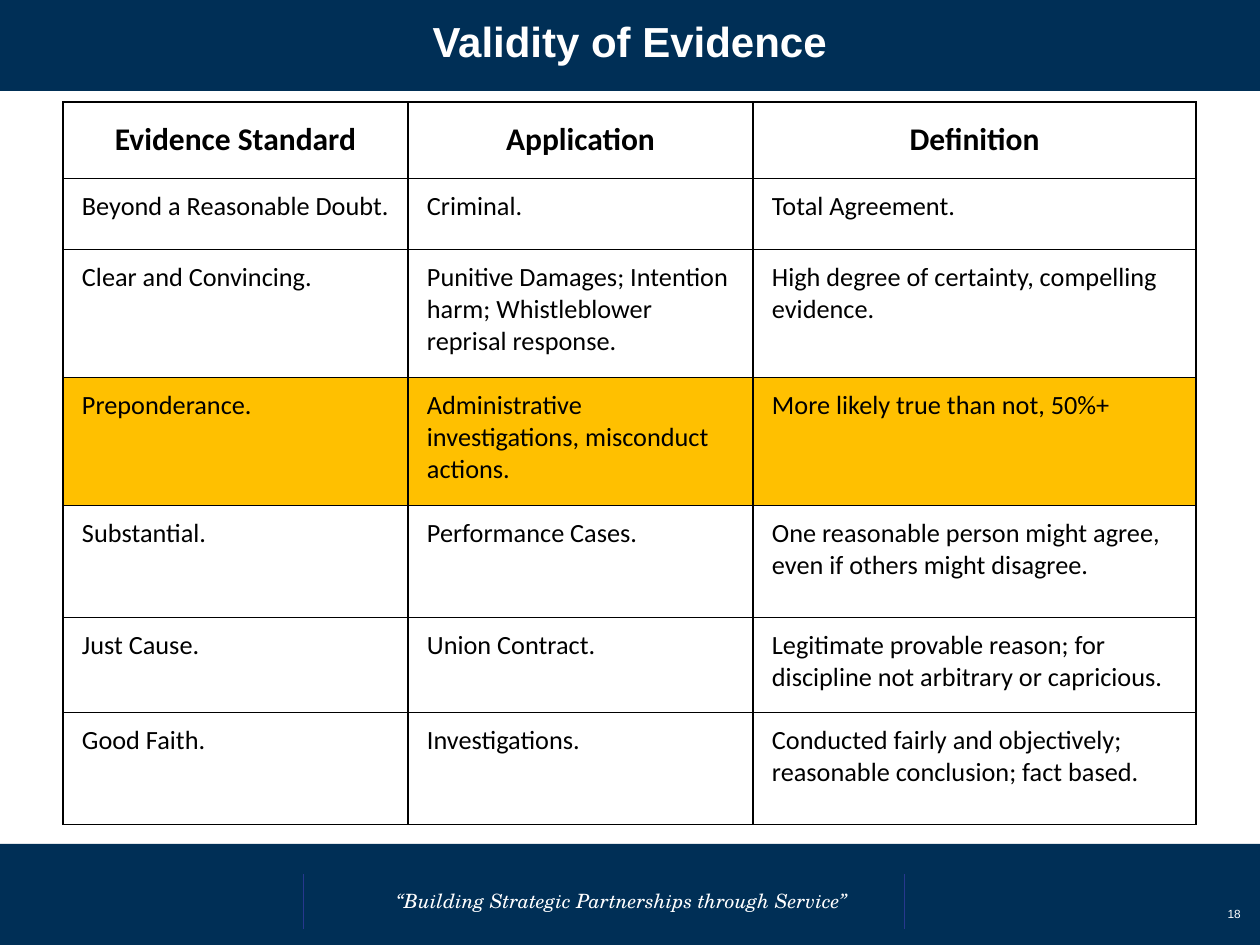
from dataclasses import dataclass

from pptx import Presentation
from pptx.dml.color import RGBColor as RGB
from pptx.enum.shapes import MSO_CONNECTOR as CONN, MSO_SHAPE as SHAPE
from pptx.enum.text import MSO_ANCHOR as ANCHOR, PP_ALIGN as ALIGN
from pptx.oxml import parse_xml
from pptx.oxml.ns import nsdecls
from pptx.util import Emu, Pt

PX = 914400 / 94.5  # EMU in one px
W, H = 1260, 945


def px(*lengths):
    return [Emu(round(n * PX)) for n in lengths]


@dataclass(frozen=True)
class Theme:
    navy: str = "002F56"
    rule: str = "27388E"
    gold: str = "FFC000"
    black: str = "000000"
    white: str = "FFFFFF"
    sans: str = "Arial"
    table: str = "Calibri"
    serif: str = "TeX Gyre Schola"
    title_size: int = 32
    head_size: int = 24
    body_size: int = 20
    motto_size: int = 15
    number_size: int = 9


class SlideBuilder:
    def __init__(self, slide, theme):
        self.s, self.t = slide, theme

    def run(self, tf, text, font, size, color, align=ALIGN.LEFT,
            bold=False, italic=False):
        p = tf.paragraphs[0]
        p.alignment = align
        r = p.add_run()
        r.text = text
        f = r.font
        f.name, f.size, f.bold, f.italic = font, Pt(size), bold, italic
        f.color.rgb = RGB.from_string(color)

    def bar(self, x, y, w, h):
        sp = self.s.shapes.add_shape(SHAPE.RECTANGLE, *px(x, y, w, h))
        sp.shadow.inherit = False
        sp.fill.solid()
        sp.fill.fore_color.rgb = RGB.from_string(self.t.navy)
        sp.line.fill.background()

    def divider(self, x, top, bottom):
        ln = self.s.shapes.add_connector(CONN.STRAIGHT, *px(x, top, x, bottom))
        ln.line.width = Pt(0.75)
        ln.line.color.rgb = RGB.from_string(self.t.rule)
        ln.element.spPr.append(parse_xml(f"<a:effectLst {nsdecls('a')}/>"))

    def title(self, text, x, y, w, h):
        sp = self.s.shapes.title
        sp.left, sp.top, sp.width, sp.height = px(x, y, w, h)
        sp.element.getparent().append(sp.element)  # in front of the bar
        tf = sp.text_frame
        tf.vertical_anchor = ANCHOR.MIDDLE
        self.run(tf, text, self.t.sans, self.t.title_size, self.t.white,
                 ALIGN.CENTER, bold=True)

    def text(self, text, x, y, w, h, font, size, anchor=ANCHOR.TOP, **style):
        tf = self.s.shapes.add_textbox(*px(x, y, w, h)).text_frame
        tf.word_wrap = True
        tf.vertical_anchor = anchor
        self.run(tf, text, font, size, self.t.white, **style)

    def borders(self, cell):
        tc_pr = cell._tc.get_or_add_tcPr()
        for i, side in enumerate("LRTB"):
            tc_pr.insert(i, parse_xml(
                f'<a:ln{side} {nsdecls("a")} w="12700"><a:solidFill>'
                f'<a:srgbClr val="{self.t.black}"/></a:solidFill></a:ln{side}>'))

    def table(self, x, y, cols, heights, rows, marked):
        frame = self.s.shapes.add_table(
            len(rows), len(cols), *px(x, y, sum(cols), sum(heights)))
        tbl = frame.table
        tbl.first_row = tbl.horz_banding = False
        for col, width in zip(tbl.columns, px(*cols)):
            col.width = width
        for row, height in zip(tbl.rows, px(*heights)):
            row.height = height
        for i, row in enumerate(rows):
            head = i == 0
            for j, text in enumerate(row):
                cell = tbl.cell(i, j)
                (cell.margin_left, cell.margin_top, cell.margin_right,
                 cell.margin_bottom) = px(19, 19 if head else 12, 19, 19)
                if i == marked:
                    cell.fill.solid()
                    cell.fill.fore_color.rgb = RGB.from_string(self.t.gold)
                else:
                    cell.fill.background()
                self.borders(cell)
                self.run(cell.text_frame, text, self.t.table,
                         self.t.head_size if head else self.t.body_size,
                         self.t.black, ALIGN.CENTER if head else ALIGN.LEFT,
                         bold=head)


EVIDENCE = [
    ("Evidence Standard", "Application", "Definition"),
    ("Beyond a Reasonable Doubt.", "Criminal.", "Total Agreement."),
    ("Clear and Convincing.",
     "Punitive Damages; Intention harm; Whistleblower reprisal response.",
     "High degree of certainty, compelling evidence."),
    ("Preponderance.", "Administrative investigations, misconduct actions.",
     "More likely true than not, 50%+"),
    ("Substantial.", "Performance Cases.",
     "One reasonable person might agree, even if others might disagree."),
    ("Just Cause.", "Union Contract.",
     "Legitimate provable reason; for discipline not arbitrary or capricious."),
    ("Good Faith.", "Investigations.",
     "Conducted fairly and objectively; reasonable conclusion; fact based."),
]


def main():
    prs = Presentation()
    prs.slide_width, prs.slide_height = px(W, H)
    theme = Theme()
    b = SlideBuilder(prs.slides.add_slide(prs.slide_layouts[5]), theme)

    # Footer band with motto
    b.bar(0, 844, W, 101)
    for x in (905, 303):
        b.divider(x, 874, 929)
    b.text("“Building Strategic Partnerships through Service”",
           387, 884, 491, 33, theme.serif, theme.motto_size, italic=True)

    # Title band
    band = (0, -10, W, 101)
    b.bar(*band)
    b.title("Validity of Evidence", *band)

    # Evidence standards, with the standard in use marked
    b.table(63, 102, (345, 345, 443), (76, 71, 128, 128, 112, 95, 112),
            EVIDENCE, marked=3)

    # Slide number
    b.text("18", 1197, 889, 53, 50, theme.sans, theme.number_size,
           ANCHOR.MIDDLE, align=ALIGN.RIGHT)

    prs.save("out.pptx")


if __name__ == "__main__":
    main()
